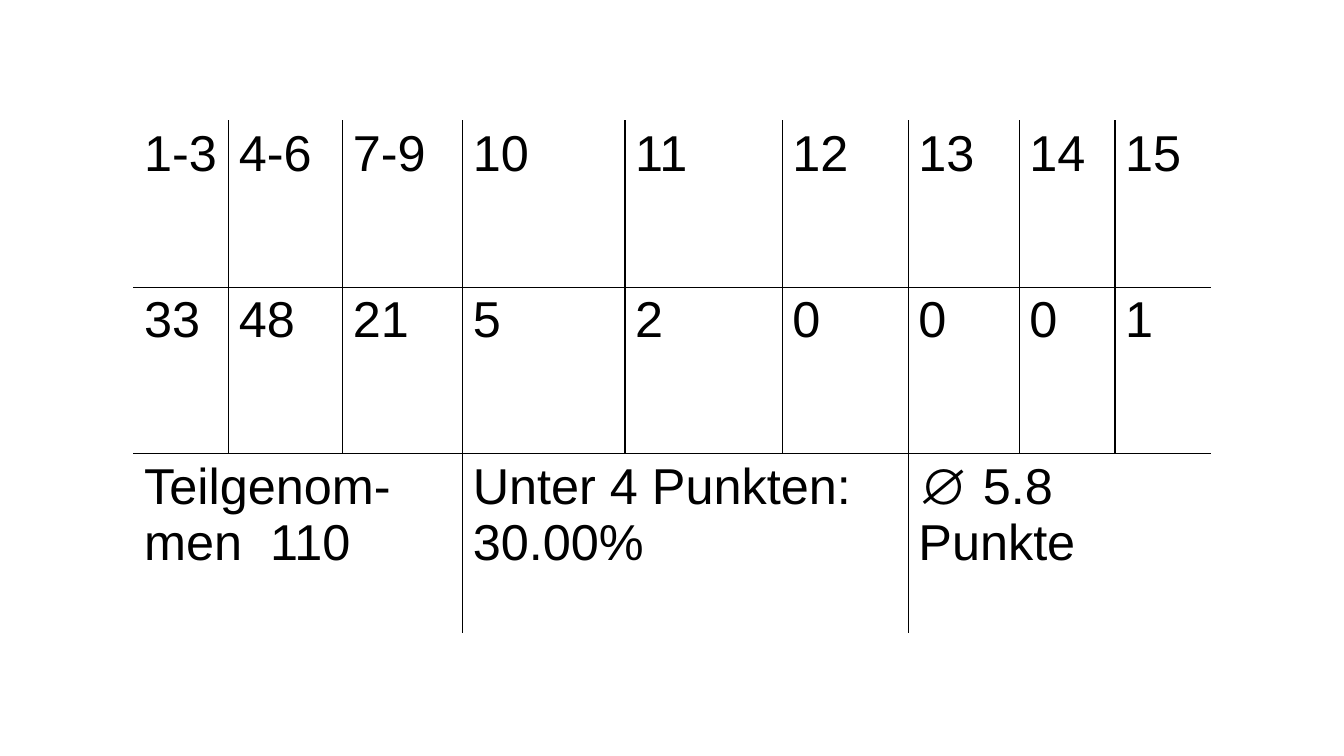
from dataclasses import dataclass

from lxml import etree
from pptx import Presentation
from pptx.dml.color import RGBColor
from pptx.oxml.ns import qn
from pptx.table import Table, _Cell
from pptx.util import Emu, Pt

EMU_PER_PX = 9144
BLANK_LAYOUT = 6
BLACK = "000000"
WHITE = "FFFFFF"
FONT_NAME = "Arial"
FONT_SIZE = 36
BORDER_WIDTH = 1
TABLE_LEFT = 133
TABLE_TOP = 120
COLUMN_WIDTHS = [94, 113, 119, 161, 156, 125, 110, 95, 95]
ROW_HEIGHTS = [165, 165, 179]


@dataclass(frozen=True)
class Entry:
    """Paragraphs of one table entry and the number of columns it covers."""

    paragraphs: tuple[str, ...]
    span: int = 1


POINT_RANGES = ["1-3", "4-6", "7-9", "10", "11", "12", "13", "14", "15"]
PARTICIPANTS = ["33", "48", "21", "5", "2", "0", "0", "0", "1"]
SUMMARY = [
    Entry(("Teilgenom-men  110",), 3),
    Entry(("Unter 4 Punkten:", "30.00%"), 3),
    Entry(("∅ 5.8 Punkte",), 3),
]
ROWS = [
    [Entry((label,)) for label in POINT_RANGES],
    [Entry((count,)) for count in PARTICIPANTS],
    SUMMARY,
]


def px(length: int) -> Emu:
    """Turn pixels into EMU."""
    return Emu(length * EMU_PER_PX)


def color(value: str) -> RGBColor:
    """Turn a hex string into a colour."""
    return RGBColor.from_string(value)


def add_border(cell: _Cell, side: str, inner: bool) -> None:
    """Draw one cell side, black inside the table and white on its rim."""
    properties = cell._tc.get_or_add_tcPr()
    line = etree.SubElement(properties, qn(f"a:ln{side}"), w=str(Pt(BORDER_WIDTH)))
    fill = etree.SubElement(line, qn("a:solidFill"))
    etree.SubElement(fill, qn("a:srgbClr"), val=BLACK if inner else WHITE)


def style_cells(table: Table, row: int, first: int, span: int) -> None:
    """Fill and border every cell that an entry covers."""
    last = first + span - 1
    for column in range(first, last + 1):
        cell = table.cell(row, column)
        if column == first:
            add_border(cell, "L", first > 0)
        if column in (first, last):
            add_border(cell, "R", last < len(COLUMN_WIDTHS) - 1)
        add_border(cell, "T", row > 0)
        add_border(cell, "B", row < len(ROW_HEIGHTS) - 1)
        cell.fill.solid()
        cell.fill.fore_color.rgb = color(WHITE)


def write_entry(cell: _Cell, entry: Entry) -> None:
    """Write the paragraphs of an entry into its cell."""
    frame = cell.text_frame
    for index, text in enumerate(entry.paragraphs):
        para = frame.add_paragraph() if index else frame.paragraphs[0]
        span = para.add_run()
        span.text = text
        span.font.name = FONT_NAME
        span.font.size = Pt(FONT_SIZE)
        span.font.color.rgb = color(BLACK)


def main() -> None:
    """Build the slide with the table of results."""
    deck = Presentation()
    deck.slide_width = px(1333)
    deck.slide_height = px(750)
    page = deck.slides.add_slide(deck.slide_layouts[BLANK_LAYOUT])
    table = page.shapes.add_table(
        len(ROW_HEIGHTS), len(COLUMN_WIDTHS), px(TABLE_LEFT), px(TABLE_TOP),
        px(sum(COLUMN_WIDTHS)), px(sum(ROW_HEIGHTS)),
    ).table
    table.first_row = False
    table.horz_banding = False
    for column, width in zip(table.columns, COLUMN_WIDTHS):
        column.width = px(width)
    for row, height in zip(table.rows, ROW_HEIGHTS):
        row.height = px(height)
    for row_index, entries in enumerate(ROWS):
        first = 0
        for entry in entries:
            cell = table.cell(row_index, first)
            if entry.span > 1:
                cell.merge(table.cell(row_index, first + entry.span - 1))
            style_cells(table, row_index, first, entry.span)
            write_entry(cell, entry)
            first += entry.span
    deck.save("out.pptx")


if __name__ == "__main__":
    main()
